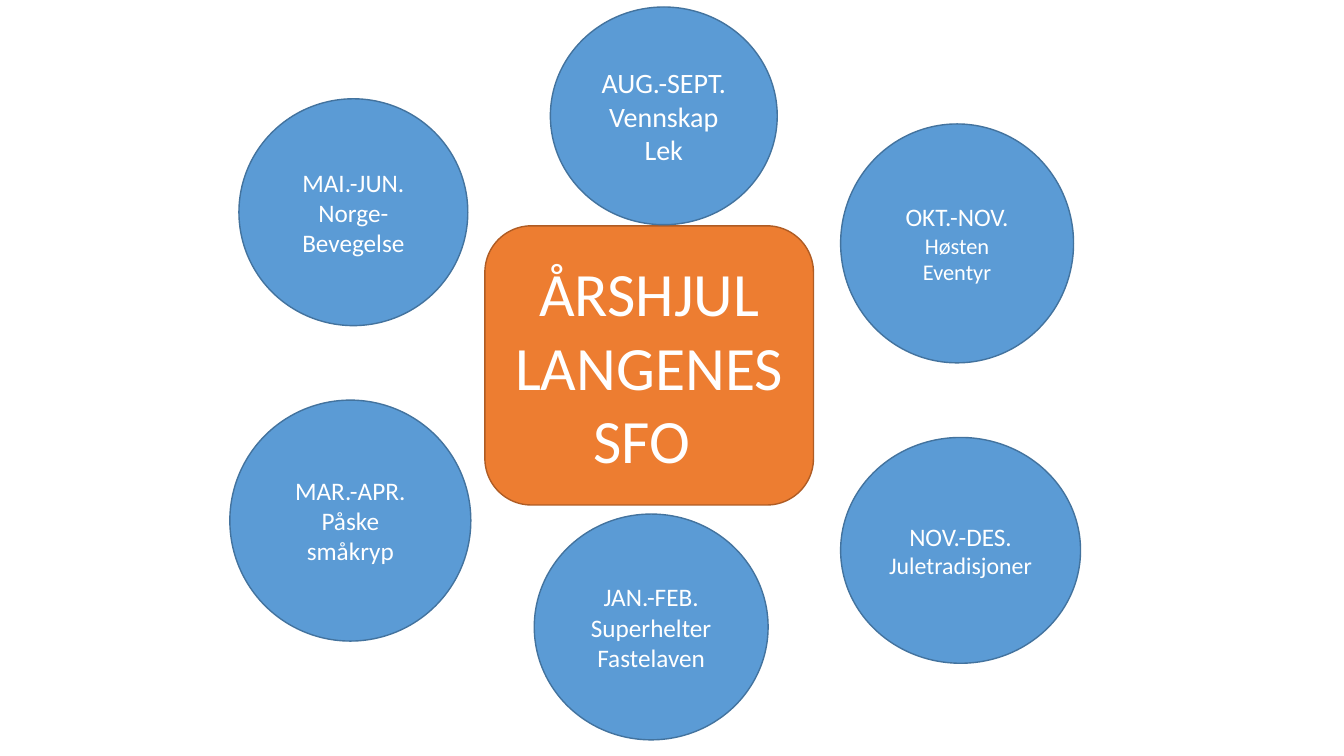
import dataclasses

import pptx
import pptx.dml.color
import pptx.enum.shapes
import pptx.enum.text
import pptx.util

SHAPES = pptx.enum.shapes.MSO_SHAPE


@dataclasses.dataclass(frozen=True)
class Theme:
    """Colours, font and type sizes of the year wheel."""

    font: str = "Calibri"
    text: str = "FFFFFF"
    hub_fill: str = "ED7D31"
    hub_line: str = "AF5C24"
    period_fill: str = "5B9BD5"
    period_line: str = "43739E"
    line_width: int = 1
    title: int = 44
    large: int = 20
    body: int = 18
    small: int = 17
    smallest: int = 16


THEME = Theme()
SLIDE_WIDTH = pptx.util.Inches(13.33)
SLIDE_HEIGHT = pptx.util.Inches(7.5)

HUB_BOX = (36.08, 29.87, 24.45, 36.93)
HUB_TEXT = [("ÅRSHJUL", THEME.title), ("LANGENES", THEME.title), ("SFO ", THEME.title)]

PERIODS = [
    ((17.78, 13.07, 17.03, 30), [("MAI.-JUN.", THEME.body), ("Norge- Bevegelse", THEME.body)]),
    ((40.95, 0.93, 16.88, 28.8), [("AUG.-SEPT.", THEME.large), ("Vennskap\nLek", THEME.large)]),
    ((62.55, 16.4, 17.33, 31.6), [("OKT.-NOV.", THEME.body), ("Høsten\nEventyr", THEME.smallest)]),
    ((62.55, 57.87, 17.85, 29.87), [("NOV.-DES.", THEME.body), ("Juletradisjoner", THEME.small)]),
    (
        (39.75, 68, 17.4, 29.87),
        [("JAN.-FEB.", THEME.body), ("Superhelter", THEME.body), ("Fastelaven", THEME.body)],
    ),
    (
        (17.1, 52.93, 17.93, 31.87),
        [("MAR.-APR.", THEME.body), ("Påske", THEME.body), ("småkryp", THEME.body)],
    ),
]


def color(value):
    """Turn a hex string into a colour."""
    return pptx.dml.color.RGBColor.from_string(value)


def place(box):
    """Convert percentages of the slide's width and height into lengths."""
    sides = (SLIDE_WIDTH, SLIDE_HEIGHT) * 2
    return [round(side * share / 100) for side, share in zip(sides, box)]


def add_run(paragraph, text, size):
    """Add one run in the theme's font."""
    run = paragraph.add_run()
    run.text = text
    run.font.name = THEME.font
    run.font.size = pptx.util.Pt(size)
    run.font.color.rgb = color(THEME.text)


def write_paragraphs(frame, paragraphs):
    """Write centred paragraphs, breaking lines inside them where asked."""
    frame.word_wrap = True
    frame.vertical_anchor = pptx.enum.text.MSO_ANCHOR.MIDDLE
    for index, (text, size) in enumerate(paragraphs):
        paragraph = frame.add_paragraph() if index else frame.paragraphs[0]
        paragraph.alignment = pptx.enum.text.PP_ALIGN.CENTER
        for number, line in enumerate(text.split("\n")):
            if number:
                paragraph.add_line_break()
            add_run(paragraph, line, size)


def add_bubble(slide, kind, box, fill, line, paragraphs):
    """Add a filled, outlined shape with centred text."""
    shape = slide.shapes.add_shape(kind, *place(box))
    shape.shadow.inherit = False
    shape.fill.solid()
    shape.fill.fore_color.rgb = color(fill)
    shape.line.color.rgb = color(line)
    shape.line.width = pptx.util.Pt(THEME.line_width)
    write_paragraphs(shape.text_frame, paragraphs)


def main():
    """Build the year wheel and save it."""
    presentation = pptx.Presentation()
    presentation.slide_width = SLIDE_WIDTH
    presentation.slide_height = SLIDE_HEIGHT
    slide = presentation.slides.add_slide(presentation.slide_layouts[6])
    add_bubble(
        slide, SHAPES.FLOWCHART_ALTERNATE_PROCESS, HUB_BOX, THEME.hub_fill, THEME.hub_line, HUB_TEXT
    )
    for box, paragraphs in PERIODS:
        add_bubble(slide, SHAPES.OVAL, box, THEME.period_fill, THEME.period_line, paragraphs)
    presentation.save("out.pptx")


if __name__ == "__main__":
    main()
